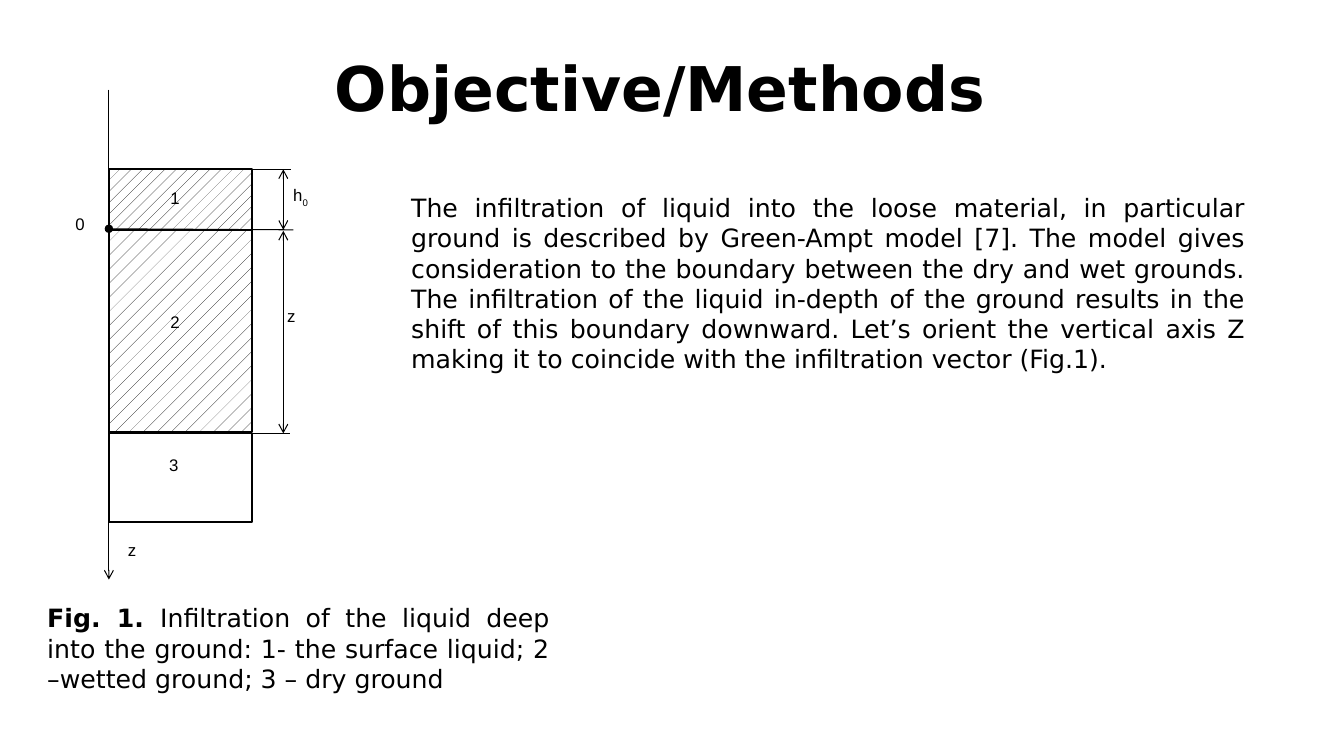
"""Build the Objective/Methods slide with the ground infiltration diagram."""
import pptx
import pptx.dml.color
import pptx.enum.dml
import pptx.enum.shapes
import pptx.enum.text
import pptx.oxml
import pptx.oxml.ns
import pptx.util

Inches = pptx.util.Inches
Pt = pptx.util.Pt
Pattern = pptx.enum.dml.MSO_PATTERN
Align = pptx.enum.text.PP_ALIGN


def color(hex_code):
    return pptx.dml.color.RGBColor.from_string(hex_code)


def add_text(left, top, width, height, spans, size, font="DejaVu Sans", align=Align.LEFT):
    box = slide.shapes.add_textbox(Inches(left), Inches(top), Inches(width), Inches(height))
    box.text_frame.word_wrap = True
    para = box.text_frame.paragraphs[0]
    para.alignment = align
    for text, bold in spans:
        span = para.add_run()
        span.text = text
        span.font.name = font
        span.font.size = Pt(size)
        span.font.bold = bold
        span.font.color.rgb = color("000000")
    return box


deck = pptx.Presentation()
deck.slide_width = Inches(13.33)
deck.slide_height = Inches(7.5)
slide = deck.slides.add_slide(deck.slide_layouts[6])

caption = add_text(0.17, 5.93, 5.38, 1.01, [
    ("Fig. 1. ", True),
    ("Infiltration of the liquid deep into the ground: 1- the surface liquid; "
     "2 –wetted ground; 3 – dry ground", False),
], 18, align=Align.JUSTIFY)
caption_properties = caption.text_frame.paragraphs[0]._p.get_or_add_pPr()
caption_properties.set("marL", str(Inches(0.2)))
caption_properties.set("indent", "0")

column_left, column_width = 1.08, 1.42
liquid_top, surface, wet_bottom = 1.68, 2.28, 4.3

layers = [
    (2.26, 2.03, Pattern.PERCENT_5),
    (wet_bottom, 0.88, None),
    (liquid_top, 0.6, Pattern.PERCENT_10),
]
for top, height, pattern in layers:
    layer = slide.shapes.add_shape(
        pptx.enum.shapes.MSO_SHAPE.RECTANGLE,
        Inches(column_left), Inches(top), Inches(column_width), Inches(height))
    layer.shadow.inherit = False
    if pattern is None:
        layer.fill.solid()
        layer.fill.fore_color.rgb = color("FFFFFF")
    else:
        layer.fill.patterned()
        layer.fill.pattern = pattern
        layer.fill.fore_color.rgb = color("000000")
        layer.fill.back_color.rgb = color("FFFFFF")
    layer.line.color.rgb = color("000000")
    layer.line.width = Pt(1.25)

lines = [
    (column_left, 0.89, column_left, 5.75, None, "arrow"),
    (2.47, wet_bottom, 2.88, wet_bottom, None, None),
    (column_left, 2.27, 2.91, surface, "oval", None),
    (2.47, liquid_top, 2.89, liquid_top, None, None),
    (2.81, liquid_top, 2.81, surface, "arrow", "arrow"),
    (2.81, 2.29, 2.81, wet_bottom, "arrow", "arrow"),
]
for x1, y1, x2, y2, start_mark, end_mark in lines:
    line = slide.shapes.add_connector(
        pptx.enum.shapes.MSO_CONNECTOR.STRAIGHT,
        Inches(x1), Inches(y1), Inches(x2), Inches(y2))
    line.line.color.rgb = color("000000")
    line.line.width = Pt(0.75)
    outline = line.line._get_or_add_ln()
    for tag, mark in (("a:headEnd", start_mark), ("a:tailEnd", end_mark)):
        if mark:
            end = pptx.oxml.parse_xml(f"<{tag} {pptx.oxml.ns.nsdecls('a')}/>")
            end.set("type", mark)
            outline.append(end)
    line._element.spPr.append(
        pptx.oxml.parse_xml(f"<a:effectLst {pptx.oxml.ns.nsdecls('a')}/>"))

labels = [
    (0.65, 2.07, "0", ""),
    (2.81, 1.78, "h", "0"),
    (2.75, 2.98, "z", ""),
    (1.59, 1.81, "1", ""),
    (1.59, 3.04, "2", ""),
    (1.58, 4.46, "3", ""),
    (1.17, 5.31, "z", ""),
]
for left, top, symbol, subscript in labels:
    spans = [(text, False) for text in (symbol, subscript) if text]
    label = add_text(left, top, 0.75, 0.53, spans, 12, font="Arial")
    if subscript:
        index_span = label.text_frame.paragraphs[0].runs[1]
        index_span.font._element.set("baseline", "-30000")

add_text(3.98, 1.86, 8.47, 1.92, [(
    "The infiltration of liquid into the loose material, in particular ground is described "
    "by Green-Ampt model [7]. The model gives consideration to the boundary between the dry "
    "and wet grounds. The infiltration of the liquid in-depth of the ground results in the "
    "shift of this boundary downward. Let’s orient the vertical axis Z making it to coincide "
    "with the infiltration vector (Fig.1).", False)], 18, align=Align.JUSTIFY)

title = add_text(0.8, 0.18, 11.5, 1.45, [("Objective/Methods", True)], 44, align=Align.CENTER)
title.text_frame.vertical_anchor = pptx.enum.text.MSO_ANCHOR.MIDDLE
title.text_frame.paragraphs[0].line_spacing = 0.9

deck.save("out.pptx")
